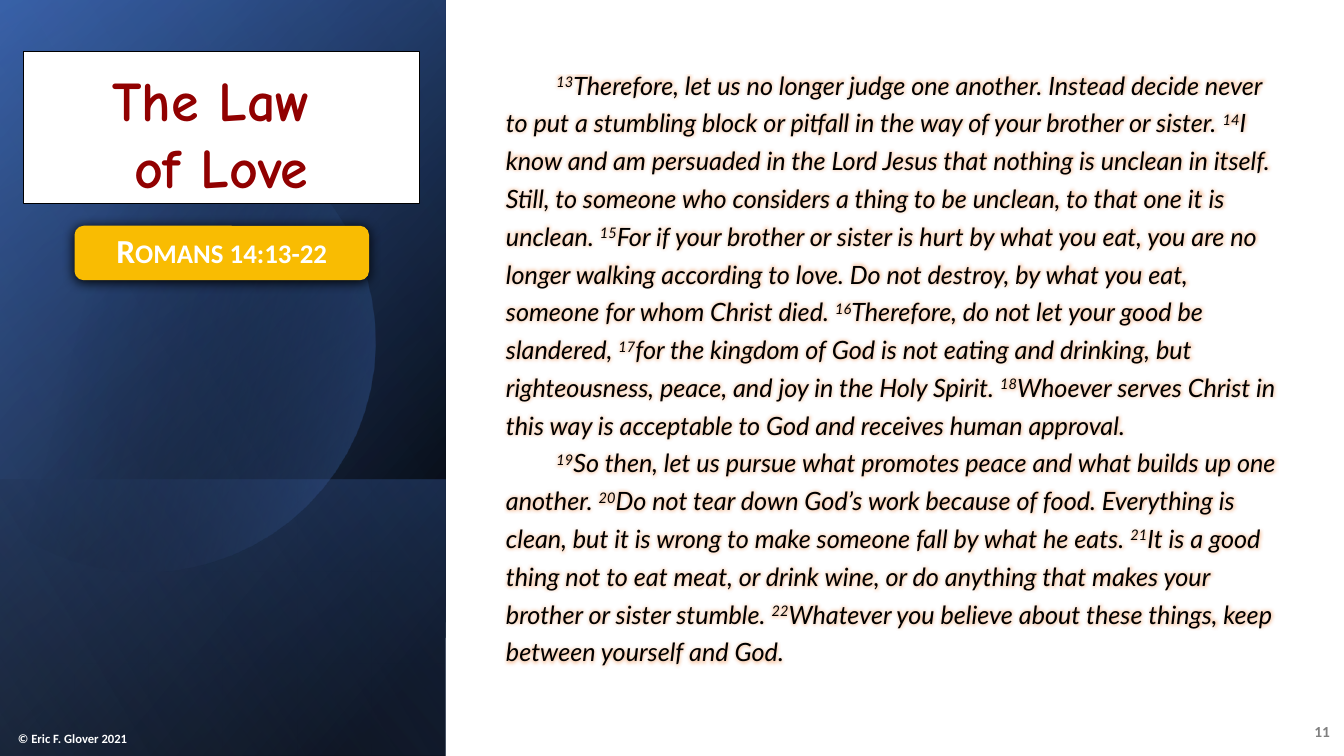
import pptx
import pptx.util
import pptx.dml.color
import pptx.enum.shapes
import pptx.enum.text
import pptx.oxml
import pptx.oxml.ns
from lxml import etree

RGB = pptx.dml.color.RGBColor
SHAPE = pptx.enum.shapes.MSO_SHAPE
ALIGN = pptx.enum.text.PP_ALIGN
ANCHOR = pptx.enum.text.MSO_ANCHOR
Inches, Pt, qn = pptx.util.Inches, pptx.util.Pt, pptx.oxml.ns.qn
NS = 'xmlns:a="http://schemas.openxmlformats.org/drawingml/2006/main"'

WIDTH, HEIGHT = Inches(13.33), Inches(7.5)
SIDEBAR = 33.16  # sidebar width, percent of the slide

WHITE, BLACK = RGB(0xFF, 0xFF, 0xFF), RGB(0, 0, 0)
NAVY, BLUE, PALE_BLUE = RGB(0x2F, 0x55, 0x97), RGB(0x44, 0x72, 0xC4), RGB(0x8F, 0xAA, 0xDC)
MAROON, GOLD = RGB(0x91, 0x01, 0x01), RGB(0xF9, 0xBC, 0x02)
GRAY, ORANGE = RGB(0x80, 0x80, 0x80), RGB(0xED, 0x7D, 0x31)

# Sidebar layers: top and height in percent, angle, stops (position, colour, opacity)
LAYERS = [
    (0, 100, 50, [(8, BLACK, 100), (100, NAVY, 100)]),
    (0, 100, 30, [(0, BLACK, 0), (99, BLUE, 46)]),
    (63.47, 36.53, 130, [(2, BLUE, 29), (100, BLACK, 30)]),
]
SHEEN = (0, 100, 120, [(0, BLACK, 0), (99, PALE_BLUE, 11)])

# Outline of the cut circle in inches: 2 values are a line, 6 values a curve
CIRCLE_START = (1.49, 1.1)
CIRCLE = [
    (2.46, 1.12, 3.35, 1.77, 3.63, 2.75), (3.98, 3.97, 3.28, 5.23, 2.07, 5.58),
    (1.31, 5.8, 0.53, 5.61, -0.03, 5.14), (-0.15, 5.03), (-0.15, 1.75), (0, 1.61),
    (0.23, 1.42, 0.5, 1.28, 0.8, 1.19), (1.03, 1.13, 1.26, 1.1, 1.49, 1.1),
]

PASSAGE = [
    [
        (13, "Therefore, let us no longer judge one another. Instead decide never to put "
             "a stumbling block or pitfall in the way of your brother or sister. "),
        (14, "I know and am persuaded in the Lord Jesus that nothing is unclean in itself. "
             "Still, to someone who considers a thing to be unclean, to that one it is unclean. "),
        (15, "For if your brother or sister is hurt by what you eat, you are no longer walking "
             "according to love. Do not destroy, by what you eat, someone for whom Christ died. "),
        (16, "Therefore, do not let your good be slandered, "),
        (17, "for the kingdom of God is not eating and drinking, but righteousness, peace, "
             "and joy in the Holy Spirit. "),
        (18, "Whoever serves Christ in this way is acceptable to God and receives human approval."),
    ],
    [
        (19, "So then, let us pursue what promotes peace and what builds up one another. "),
        (20, "Do not tear down God’s work because of food. Everything is clean, but it is wrong "
             "to make someone fall by what he eats. "),
        (21, "It is a good thing not to eat meat, or drink wine, or do anything that makes your "
             "brother or sister stumble. "),
        (22, "Whatever you believe about these things, keep between yourself and God."),
    ],
]


def area(left, top, width, height):
    """Turn percentages of the slide into lengths."""
    return (int(WIDTH * left / 100), int(HEIGHT * top / 100),
            int(WIDTH * width / 100), int(HEIGHT * height / 100))


def color_xml(color, opacity):
    return f'<a:srgbClr val="{color}"><a:alpha val="{opacity * 1000}"/></a:srgbClr>'


def plain(shape, fill=None):
    shape.shadow.inherit = False
    shape.line.fill.background()
    if fill is None:
        shape.fill.background()
    else:
        shape.fill.solid()
        shape.fill.fore_color.rgb = fill


def gradient(shape, angle, stops):
    plain(shape)
    stop_xml = "".join(f'<a:gs pos="{position * 1000}">{color_xml(color, opacity)}</a:gs>'
                       for position, color, opacity in stops)
    fill = pptx.oxml.parse_xml(
        f'<a:gradFill {NS} rotWithShape="1"><a:gsLst>{stop_xml}</a:gsLst>'
        f'<a:lin ang="{angle * 60000}" scaled="0"/></a:gradFill>')
    properties = shape.element.spPr
    properties.replace(properties.find(qn("a:noFill")), fill)


def add_layer(slide, top, height, angle, stops):
    """Sidebar panel, mirrored and turned a quarter so its gradient runs upwards."""
    x, y, across, down = area(0, top, SIDEBAR, height)
    layer = slide.shapes.add_shape(SHAPE.RECTANGLE, x + (across - down) // 2,
                                   y + (down - across) // 2, down, across)
    layer.rotation = 90
    layer.element.spPr.find(qn("a:xfrm")).set("flipH", "1")
    gradient(layer, angle, stops)


def add_circle(slide, steps=16):
    points, last = [], CIRCLE_START
    for segment in CIRCLE:
        if len(segment) == 2:
            points.append(segment)
        else:
            controls = [last, segment[:2], segment[2:4], segment[4:]]
            for step in range(1, steps + 1):
                t = step / steps
                weights = ((1 - t) ** 3, 3 * t * (1 - t) ** 2, 3 * t * t * (1 - t), t ** 3)
                points.append(tuple(sum(w * c[axis] for w, c in zip(weights, controls))
                                    for axis in (0, 1)))
        last = segment[-2:]
    outline = slide.shapes.build_freeform(CIRCLE_START[0] * 1000, CIRCLE_START[1] * 1000,
                                          scale=Inches(1) / 1000)
    outline.add_line_segments([(x * 1000, y * 1000) for x, y in points], close=True)
    gradient(outline.convert_to_shape(), 14, [(29, BLACK, 0), (100, BLUE, 43)])


def style(paragraph, size, face, color, align=ALIGN.LEFT, bold=True, italic=False):
    paragraph.alignment = align
    font = paragraph.font
    font.size, font.name, font.bold, font.italic = Pt(size), face, bold, italic
    font.color.rgb = color


def set_frame(shape, anchor, top=0.05, bottom=0.05):
    frame = shape.text_frame
    frame.word_wrap = True
    frame.auto_size = pptx.enum.text.MSO_AUTO_SIZE.NONE
    frame.vertical_anchor = anchor
    frame.margin_left = frame.margin_right = Inches(0.1)
    frame.margin_top, frame.margin_bottom = Inches(top), Inches(bottom)
    return frame


def add_label(slide, place, text, size, color, align, anchor):
    frame = set_frame(slide.shapes.add_textbox(*area(*place)), anchor)
    frame.text = text
    style(frame.paragraphs[0], size, "Calibri", color, align)


def add_title(slide):
    title = slide.shapes.title
    title.left, title.top, title.width, title.height = area(1.73, 6.8, 29.48, 20.13)
    title.element.spPr.append(pptx.oxml.parse_xml(
        f'<a:prstGeom {NS} prst="roundRect"><a:avLst/></a:prstGeom>'))
    plain(title, WHITE)
    title.line.color.rgb = BLACK
    title.line.width = Pt(0.75)
    frame = set_frame(title, ANCHOR.MIDDLE, 0.1, 0)
    frame.text = "The Law \vof Love"
    style(frame.paragraphs[0], 40, "Comic Neue", MAROON, ALIGN.CENTER)
    frame.paragraphs[0].space_after = Pt(6)
    slide.shapes.element.append(title.element)  # in front of the sidebar


def add_reference(slide):
    badge = slide.shapes.add_shape(SHAPE.ROUNDED_RECTANGLE, *area(5.55, 29.87, 21.91, 7.2))
    plain(badge, GOLD)
    badge.element.spPr.find(qn("a:effectLst")).append(pptx.oxml.parse_xml(
        f'<a:outerShdw {NS} blurRad="{Pt(8.5)}" dist="{Pt(1)}" dir="5400000" '
        f'algn="t" rotWithShape="0">{color_xml(BLACK, 100)}</a:outerShdw>'))
    frame = set_frame(badge, ANCHOR.MIDDLE, 0, 0.05)
    frame.text = "Romans 14:13-22"
    style(frame.paragraphs[0], 24, "Calibri", WHITE, ALIGN.CENTER)
    frame.paragraphs[0].runs[0].font._element.set("cap", "small")


def add_glowing_run(paragraph, text, baseline):
    run = paragraph.add_run()
    run.text = text
    properties = run.font._element
    properties.set("baseline", str(baseline * 1000))
    effects = etree.SubElement(properties, qn("a:effectLst"))
    effects.append(pptx.oxml.parse_xml(
        f'<a:glow {NS} rad="{Pt(5)}">{color_xml(ORANGE, 40)}</a:glow>'))


def add_passage(slide):
    frame = set_frame(slide.shapes.add_textbox(*area(36.91, 7.6, 59.26, 86.67)), ANCHOR.TOP)
    for index, verses in enumerate(PASSAGE):
        paragraph = frame.add_paragraph() if index else frame.paragraphs[0]
        style(paragraph, 18, "Lato", BLACK, bold=False, italic=True)
        paragraph.line_spacing = 1.25
        paragraph._p.get_or_add_pPr().set("indent", str(Inches(0.5)))
        for number, verse in verses:
            add_glowing_run(paragraph, str(number), 30)
            add_glowing_run(paragraph, verse, 0)


def main():
    deck = pptx.Presentation()
    deck.slide_width, deck.slide_height = WIDTH, HEIGHT
    slide = deck.slides.add_slide(deck.slide_layouts[5])

    # Backdrop and sidebar
    plain(slide.shapes.add_shape(SHAPE.RECTANGLE, *area(0, 0, 100, 100)), WHITE)
    for layer in LAYERS:
        add_layer(slide, *layer)
    add_circle(slide)
    add_layer(slide, *SHEEN)

    # Page number, title, credit, passage and reference
    add_label(slide, (96.02, 94.13, 3.68, 5.33), "11", 11, GRAY, ALIGN.RIGHT, ANCHOR.MIDDLE)
    add_title(slide)
    add_label(slide, (0.6, 95.6, 11.78, 3.73), "© Eric F. Glover 2021", 9, WHITE,
              ALIGN.LEFT, ANCHOR.BOTTOM)
    add_passage(slide)
    add_reference(slide)
    deck.save("out.pptx")


if __name__ == "__main__":
    main()
